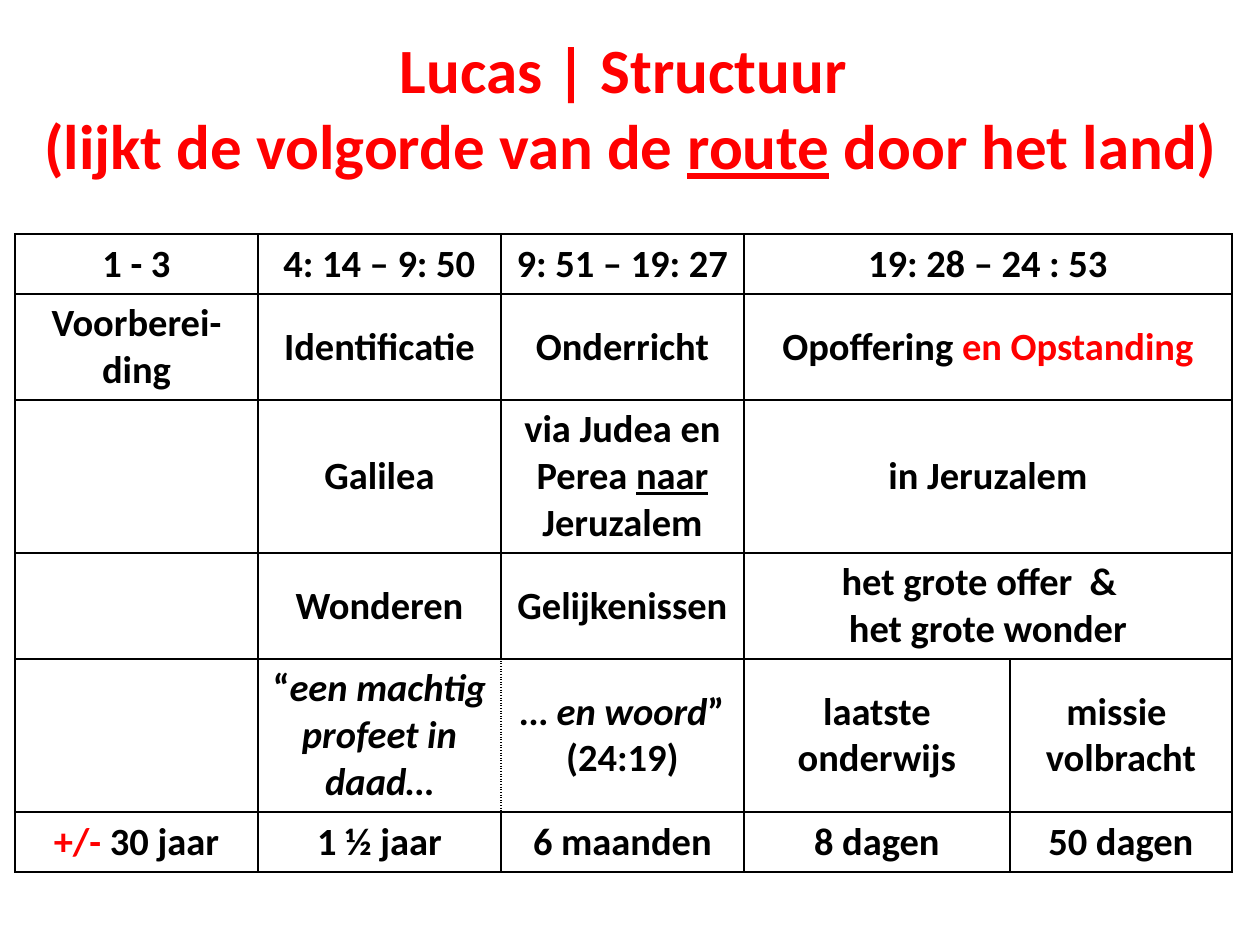
from lxml import etree
from pptx import Presentation
from pptx.dml.color import RGBColor
from pptx.enum import text
from pptx.oxml import ns
from pptx.util import Emu, Pt

PX = 914400 / 126
BLACK, RED = "000000", "FF0000"


def px(length):
    return Emu(round(length * PX))


def color(value):
    return RGBColor.from_string(value)


class SlideBuilder:
    font = "Calibri"

    def __init__(self, slide):
        self.slide = slide

    def add_text(self, frame, paragraphs, size, base=BLACK):
        """Each paragraph is a list of runs: text or (text, style); None breaks the line."""
        frame.word_wrap = True
        frame.vertical_anchor = text.MSO_ANCHOR.MIDDLE
        for index, runs in enumerate(paragraphs):
            paragraph = frame.paragraphs[0] if index == 0 else frame.add_paragraph()
            paragraph.alignment = text.PP_ALIGN.CENTER
            paragraph.font.size = Pt(size)
            for item in runs:
                if item is None:
                    paragraph.add_line_break()
                    continue
                words, style = (item, {}) if isinstance(item, str) else item
                run = paragraph.add_run()
                run.text = words
                font = run.font
                font.name, font.size, font.bold = self.font, Pt(size), True
                font.italic = style.get("italic", False)
                font.underline = style.get("underline", False)
                font.color.rgb = color(style.get("color", base))

    def text_box(self, box, paragraphs, size, base):
        shape = self.slide.shapes.add_textbox(*map(px, box))
        self.add_text(shape.text_frame, paragraphs, size, base)

    def borders(self, cell, dotted=""):
        properties = cell._tc.get_or_add_tcPr()
        for side in "LRTB":
            line = etree.SubElement(properties, ns.qn(f"a:ln{side}"), w=str(Pt(1)))
            fill = etree.SubElement(line, ns.qn("a:solidFill"))
            etree.SubElement(fill, ns.qn("a:srgbClr"), val=BLACK)
            dash = "sysDot" if side == dotted else "solid"
            etree.SubElement(line, ns.qn("a:prstDash"), val=dash)

    def table(self, left, top, widths, heights, rows, size, dotted):
        table = self.slide.shapes.add_table(
            len(heights), len(widths), px(left), px(top),
            px(sum(widths)), px(sum(heights))).table
        table.first_row = table.horz_banding = False
        for column, width in zip(table.columns, widths):
            column.width = px(width)
        for row, height in zip(table.rows, heights):
            row.height = px(height)
        for r, row in enumerate(rows):
            for c in range(len(widths)):
                cell = table.cell(r, c)
                self.borders(cell, dotted.get((r, c), ""))
                cell.fill.background()
                if c < len(row):
                    self.add_text(cell.text_frame, row[c], size)
                    cell.vertical_anchor = text.MSO_ANCHOR.MIDDLE
            # A short row spans its last entry to the right edge
            if len(row) < len(widths):
                table.cell(r, len(row) - 1).merge(table.cell(r, len(widths) - 1))


def main():
    presentation = Presentation()
    presentation.slide_width, presentation.slide_height = px(1260), px(945)
    builder = SlideBuilder(presentation.slides.add_slide(presentation.slide_layouts[6]))
    red, italic, underline = {"color": RED}, {"italic": True}, {"underline": True}

    # Title
    title = ["Lucas | Structuur ", None, "(lijkt de volgorde van de ",
             ("route", underline), " door het land)"]
    builder.text_box((25, 27, 1211, 159), [title], 36, RED)

    # Structure table
    empty = [[]]
    rows = [
        [[["1 - 3"]], [["4: 14 – 9: 50"]], [["9: 51 – 19: 27"]], [["19: 28 – 24 : 53"]]],
        [[["Voorberei-ding"]], [["Identificatie"]], [["Onderricht"]],
         [["Opoffering ", ("en Opstanding", red)]]],
        [empty, [["Galilea"]],
         [["via Judea en Perea ", ("naar ", underline), "Jeruzalem"]],
         [["in Jeruzalem"]]],
        [empty, [["Wonderen"]], [["Gelijkenissen"]],
         [["het grote offer  &  "], ["het grote wonder"]]],
        [empty, [["“", ("een machtig profeet in daad…", italic)]],
         [[("… en woord", italic), "”"], ["(24:19)"]],
         [["laatste onderwijs"]], [["missie "], ["volbracht"]]],
        [[[("+/-", red), " 30 jaar"]], [["1 ½ jaar"]], [["6 maanden"]],
         [["8 dagen"]], [["50 dagen"]]],
    ]
    builder.table(15, 234, [243, 243, 243, 266, 222], [60, 106, 153, 106, 153, 60],
                  rows, 22, {(4, 1): "R", (4, 2): "L"})

    presentation.save("out.pptx")


if __name__ == "__main__":
    main()
